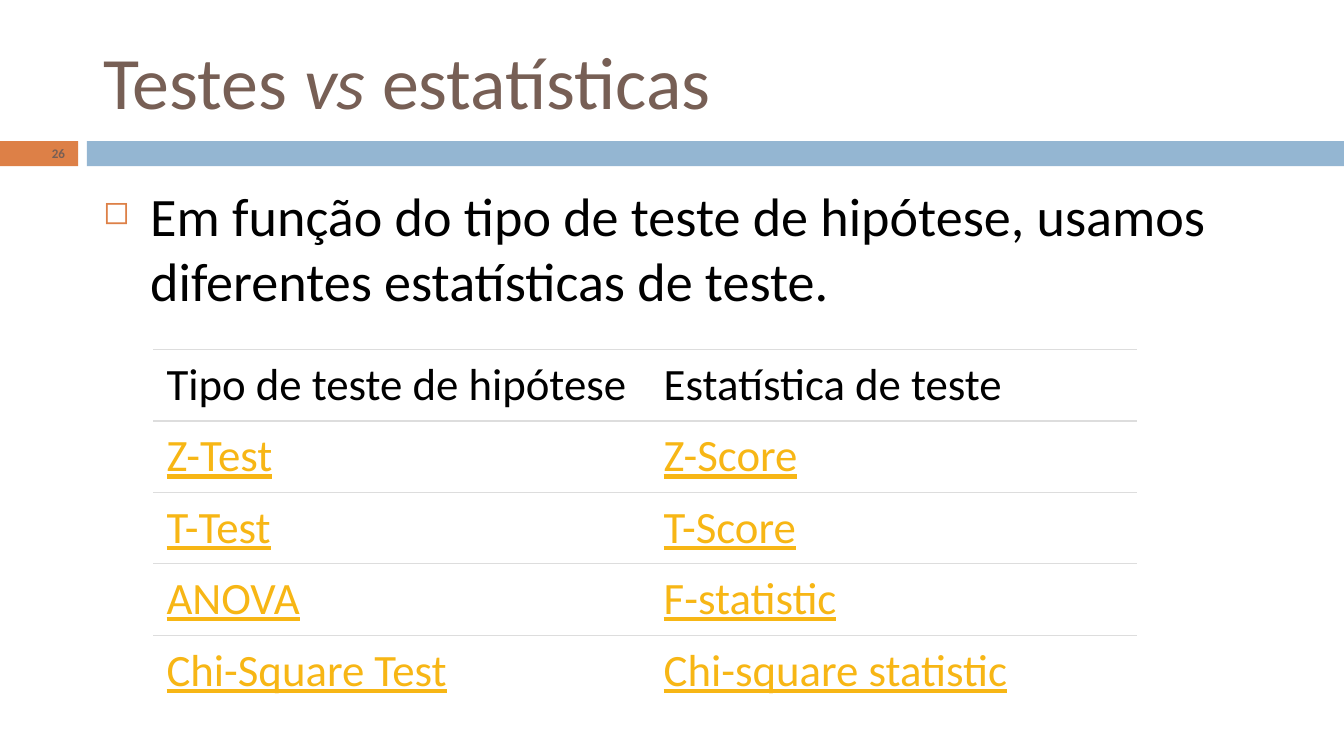
from dataclasses import dataclass

from lxml import etree
from pptx import Presentation
from pptx import util as u
from pptx.dml.color import RGBColor
from pptx.enum import shapes, text
from pptx.oxml import ns

FONT = "Calibri"
BROWN, ORANGE, BLUE = "775F55", "DD8047", "94B6D2"
BLACK, WHITE, GOLD, GREY = "000000", "FFFFFF", "F7B615", "DDDDDD"


@dataclass
class Box:
    left: float
    top: float
    width: float
    height: float

    def lengths(self) -> list:
        return [u.Pt(value) for value in (self.left, self.top, self.width, self.height)]


@dataclass
class Style:
    size: float
    color: str
    bold: bool = False
    underline: bool = False


@dataclass
class Band:
    box: Box
    color: str


BANDS = [
    Band(Box(0, 75.6, 41.9, 13.4), ORANGE),
    Band(Box(46.6, 75.6, 673.4, 13.4), BLUE),
]
TITLE_BOX = Box(48.2, 13.7, 642.2, 58.3)
NUMBER_BOX = Box(0, 75, 41.9, 14.4)
BODY_BOX = Box(48.2, 94.3, 642.2, 265.7)
ROWS = [
    ("Tipo de teste de hipótese", "Estatística de teste"),
    ("Z-Test", "Z-Score"),
    ("T-Test", "T-Score"),
    ("ANOVA", "F-statistic"),
    ("Chi-Square Test", "Chi-square statistic"),
]
COLUMN_WIDTHS = (266.4, 260.6)
ROW_HEIGHT = 38.3
TABLE_BOX = Box(82, 187.2, sum(COLUMN_WIDTHS), ROW_HEIGHT * len(ROWS))


def rgb(color: str) -> RGBColor:
    return RGBColor.from_string(color)


def add_run(paragraph, words: str, style: Style, italic: bool = False) -> None:
    run = paragraph.add_run()
    run.text = words
    font = run.font
    font.name = FONT
    font.size = u.Pt(style.size)
    font.color.rgb = rgb(style.color)
    font.bold = style.bold
    font.italic = italic
    font.underline = style.underline


def add_band(slide, band: Band) -> None:
    shape = slide.shapes.add_shape(shapes.MSO_SHAPE.RECTANGLE, *band.box.lengths())
    shape.shadow.inherit = False
    shape.fill.solid()
    shape.fill.fore_color.rgb = rgb(band.color)
    shape.line.fill.background()


def add_title(slide, box: Box) -> None:
    title = slide.shapes.title
    title.left, title.top, title.width, title.height = box.lengths()
    frame = title.text_frame
    frame.vertical_anchor = text.MSO_ANCHOR.MIDDLE
    paragraph = frame.paragraphs[0]
    paragraph.alignment = text.PP_ALIGN.LEFT
    style = Style(39.6, BROWN)
    for words, italic in (("Testes ", False), ("vs", True), (" estatísticas", False)):
        add_run(paragraph, words, style, italic)


def add_text_box(slide, box: Box, words: str, style: Style):
    frame = slide.shapes.add_textbox(*box.lengths()).text_frame
    frame.word_wrap = True
    add_run(frame.paragraphs[0], words, style)
    return frame


def add_number(slide) -> None:
    frame = add_text_box(slide, NUMBER_BOX, "26", Style(7, BROWN, bold=True))
    frame.vertical_anchor = text.MSO_ANCHOR.MIDDLE
    frame.paragraphs[0].alignment = text.PP_ALIGN.RIGHT


def add_body(slide) -> None:
    words = (
        "Em função do tipo de teste de hipótese, usamos "
        "diferentes estatísticas de teste."
    )
    paragraph = add_text_box(slide, BODY_BOX, words, Style(29, BLACK)).paragraphs[0]
    paragraph.space_before = u.Pt(7)
    properties = paragraph._p.get_or_add_pPr()
    properties.set("marL", str(u.Pt(25.2)))
    properties.set("indent", str(u.Pt(-25.2)))
    color = etree.SubElement(properties, ns.qn("a:buClr"))
    etree.SubElement(color, ns.qn("a:srgbClr"), val=ORANGE)
    etree.SubElement(properties, ns.qn("a:buSzPct"), val="60000")
    etree.SubElement(properties, ns.qn("a:buChar"), char="◻")


def set_borders(cell, bottom: bool) -> None:
    properties = cell._tc.get_or_add_tcPr()
    visible = {"a:lnL": False, "a:lnR": False, "a:lnT": True, "a:lnB": bottom}
    for position, (tag, shown) in enumerate(visible.items()):
        line = etree.Element(ns.qn(tag), w=str(u.Pt(0.75)))
        if shown:
            fill = etree.SubElement(line, ns.qn("a:solidFill"))
            etree.SubElement(fill, ns.qn("a:srgbClr"), val=GREY)
        else:
            etree.SubElement(line, ns.qn("a:noFill"))
        properties.insert(position, line)


def add_tests_table(slide) -> None:
    table = slide.shapes.add_table(
        len(ROWS), len(COLUMN_WIDTHS), *TABLE_BOX.lengths()
    ).table
    table.horz_banding = False
    table.first_row = False
    for column, width in zip(table.columns, COLUMN_WIDTHS):
        column.width = u.Pt(width)
    for row_index, words_row in enumerate(ROWS):
        table.rows[row_index].height = u.Pt(ROW_HEIGHT)
        style = Style(24, GOLD, underline=True) if row_index else Style(24, BLACK)
        for column_index, words in enumerate(words_row):
            cell = table.cell(row_index, column_index)
            cell.fill.solid()
            cell.fill.fore_color.rgb = rgb(WHITE)
            cell.vertical_anchor = text.MSO_ANCHOR.MIDDLE
            cell.margin_left = cell.margin_right = u.Pt(7.2)
            cell.margin_top = cell.margin_bottom = u.Pt(4.3)
            add_run(cell.text_frame.paragraphs[0], words, style)
            set_borders(cell, bottom=row_index < len(ROWS) - 1)


def main() -> None:
    presentation = Presentation()
    presentation.slide_width = u.Pt(720)
    presentation.slide_height = u.Pt(405)
    slide = presentation.slides.add_slide(presentation.slide_layouts[5])
    for band in BANDS:
        add_band(slide, band)
    add_title(slide, TITLE_BOX)
    add_number(slide)
    add_tests_table(slide)
    add_body(slide)
    presentation.save("out.pptx")


if __name__ == "__main__":
    main()
